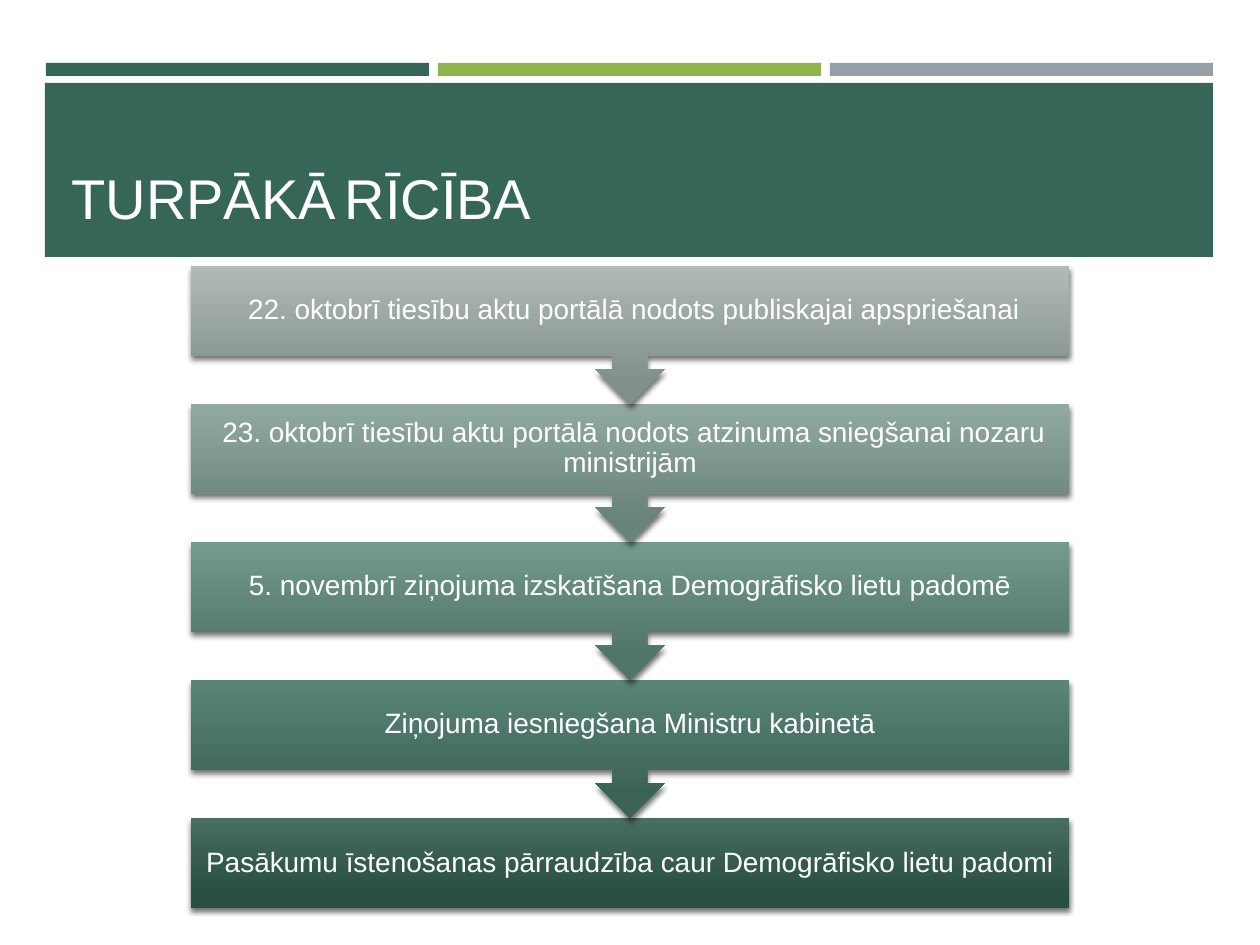
import pptx
import pptx.dml.color
import pptx.enum.shapes
import pptx.enum.text
import pptx.oxml
import pptx.oxml.ns
import pptx.util

PX = 914400 // 126
SHAPE = pptx.enum.shapes.MSO_SHAPE
ALIGN = pptx.enum.text.PP_ALIGN
ANCHOR = pptx.enum.text.MSO_ANCHOR

COLORS = {"green": "366658", "lime": "8CB64A", "gray": "969FA7", "white": "FFFFFF"}
TITLE = [("TURPĀKĀ", "Arial", 32), (" ", "Calibri", 21), ("RĪCĪBA", "Arial", 32)]
BARS = ["green", "lime", "gray"]
# Text, gradient top, gradient bottom
STEPS = [
    (" 22. oktobrī tiesību aktu portālā nodots publiskajai apspriešanai", "B1BAB7", "81908B"),
    (" 23. oktobrī tiesību aktu portālā nodots atzinuma sniegšanai nozaru ministrijām",
     "91AAA1", "68837A"),
    ("5. novembrī ziņojuma izskatīšana Demogrāfisko lietu padomē", "729A8D", "507469"),
    ("Ziņojuma iesniegšana Ministru kabinetā", "598678", "3B6256"),
    ("Pasākumu īstenošanas pārraudzība caur Demogrāfisko lietu padomi", "476E61", "294E43"),
]
BAR_LEFT, BAR_TOP, BAR_WIDTH, BAR_HEIGHT, BAR_PITCH = 46, 63, 383, 13, 392
BANNER = (45, 83, 1168, 174)
TITLE_AREA = (59, 101, 1140, 136)
STEP_LEFT, STEP_TOP, STEP_WIDTH, STEP_HEIGHT, STEP_PITCH = 191, 266, 878, 90, 138
STEP_INSET = 15

SHADOW = (
    '<a:outerShdw %s blurRad="38100" dist="25400" dir="5400000" rotWithShape="0">'
    '<a:srgbClr val="000000"><a:alpha val="55000"/></a:srgbClr></a:outerShdw>'
    % pptx.oxml.ns.nsdecls("a")
)


def rgb(value):
    return pptx.dml.color.RGBColor.from_string(value)


def add_block(page, kind, *area):
    block = page.shapes.add_shape(kind, *(n * PX for n in area))
    block.line.fill.background()
    block.shadow.inherit = False
    return block


def add_solid(page, color, *area):
    block = add_block(page, SHAPE.RECTANGLE, *area)
    block.fill.solid()
    block.fill.fore_color.rgb = rgb(COLORS[color])


def add_span(para, text, font, size):
    span = para.add_run()
    span.text = text
    span.font.name = font
    span.font.size = pptx.util.Pt(size)
    span.font.color.rgb = rgb(COLORS["white"])


def add_step(page, index):
    text, light, dark = STEPS[index]
    last = index == len(STEPS) - 1
    kind = SHAPE.RECTANGLE if last else SHAPE.DOWN_ARROW_CALLOUT
    height = STEP_HEIGHT if last else STEP_PITCH
    step = add_block(page, kind, STEP_LEFT, STEP_TOP + index * STEP_PITCH, STEP_WIDTH, height)

    step.fill.gradient()
    step.fill.gradient_angle = 270
    for stop, color, position in zip(step.fill.gradient_stops, (light, dark), (0, 0.84)):
        stop.color.rgb = rgb(color)
        stop.position = position
    effects = step.element.spPr.find(pptx.oxml.ns.qn("a:effectLst"))
    effects.append(pptx.oxml.parse_xml(SHADOW))

    frame = step.text_frame
    frame.word_wrap = True
    frame.vertical_anchor = ANCHOR.MIDDLE
    frame.margin_left = frame.margin_right = STEP_INSET * PX
    frame.margin_top = frame.margin_bottom = STEP_INSET * PX
    para = frame.paragraphs[0]
    para.alignment = ALIGN.CENTER
    para.line_spacing = 0.9
    add_span(para, text, "Arial", 16)


def main():
    deck = pptx.Presentation()
    deck.slide_width, deck.slide_height = 1260 * PX, 945 * PX
    page = deck.slides.add_slide(deck.slide_layouts[5])

    for i, color in enumerate(BARS):
        add_solid(page, color, BAR_LEFT + i * BAR_PITCH, BAR_TOP, BAR_WIDTH, BAR_HEIGHT)
    add_solid(page, "green", *BANNER)

    # Each arrow tip lies over the step below it
    for index in reversed(range(len(STEPS))):
        add_step(page, index)

    title = page.shapes.title
    title.left, title.top, title.width, title.height = (n * PX for n in TITLE_AREA)
    title.text_frame.vertical_anchor = ANCHOR.BOTTOM
    para = title.text_frame.paragraphs[0]
    para.alignment = ALIGN.LEFT
    for text, font, size in TITLE:
        add_span(para, text, font, size)
    page.shapes._spTree.append(title.element)

    deck.save("out.pptx")


if __name__ == "__main__":
    main()
